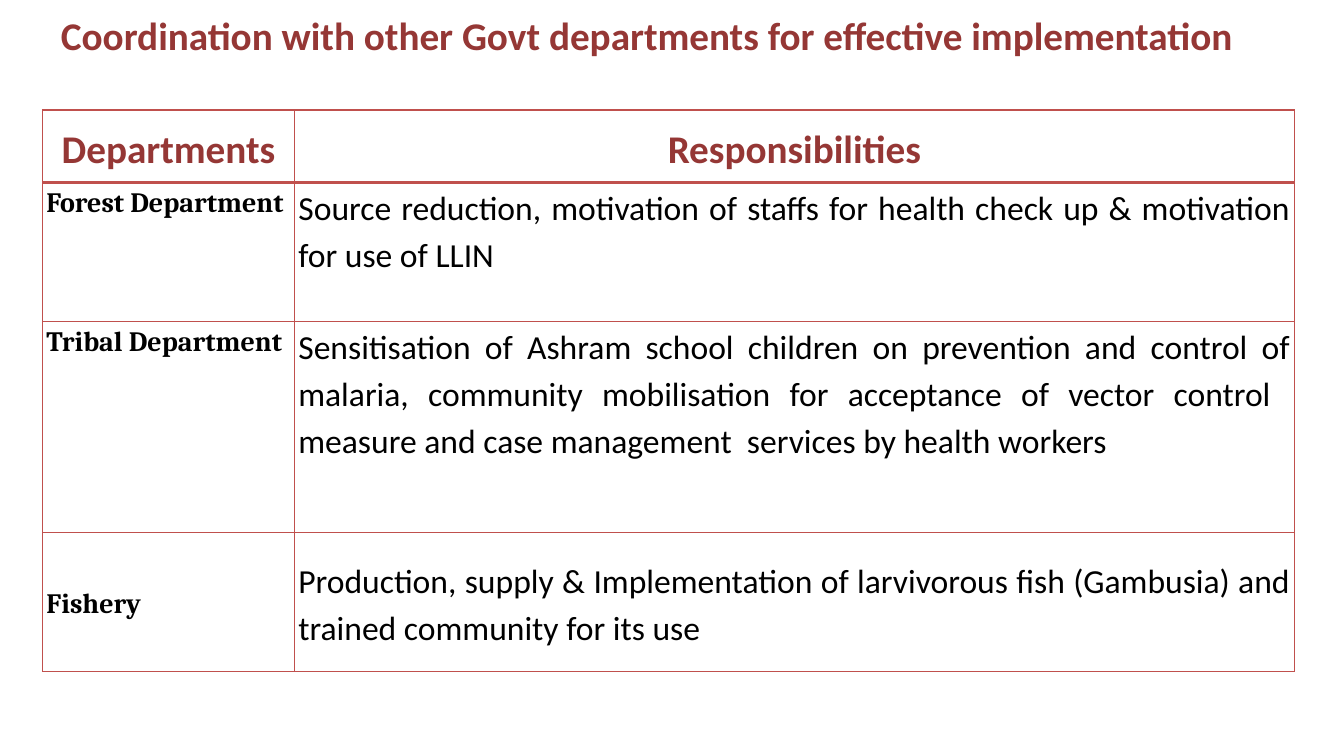
from lxml import etree
from pptx import Presentation
from pptx.dml.color import RGBColor
from pptx.enum.text import MSO_ANCHOR, MSO_AUTO_SIZE, PP_ALIGN
from pptx.oxml.ns import qn
from pptx.util import Cm, Pt

LEFT, CENTER, JUSTIFY = PP_ALIGN.LEFT, PP_ALIGN.CENTER, PP_ALIGN.JUSTIFY
TOP, MIDDLE = MSO_ANCHOR.TOP, MSO_ANCHOR.MIDDLE
NO_AUTOFIT = MSO_AUTO_SIZE.NONE
TITLE_ONLY = 5

COLORS = {"heading": "953735", "text": "000000", "border": "C0504D", "cell": "FFFFFF"}

COLUMN_WIDTHS = [6.35, 25.2]
ROW_HEIGHTS = [1.83, 3.51, 5.31, 3.51]
THIN, THICK = 1, 2.25

HEADERS = ["Departments", "Responsibilities"]
DUTIES = [
    ("Forest Department",
     "Source reduction, motivation of staffs for health check up & motivation for use of LLIN",
     TOP),
    ("Tribal Department",
     "Sensitisation of Ashram school children on prevention and control of malaria, "
     "community mobilisation for acceptance of vector control  measure and case "
     "management  services by health workers",
     TOP),
    ("Fishery",
     "Production, supply & Implementation of larvivorous fish (Gambusia) and trained "
     "community for its use",
     MIDDLE),
]


def write_text(text_frame, text, size=24, font="Calibri", color="text", bold=False,
               align=LEFT, spacing=1.0):
    paragraph = text_frame.paragraphs[0]
    paragraph.alignment = align
    paragraph.line_spacing = spacing
    run = paragraph.add_run()
    run.text = text
    run.font.size = Pt(size)
    run.font.name = font
    run.font.bold = bold
    run.font.color.rgb = RGBColor.from_string(COLORS[color])


def add_border(cell, side, width):
    properties = cell._tc.get_or_add_tcPr()
    line = etree.SubElement(properties, qn(f"a:ln{side}"), w=str(Pt(width)))
    fill = etree.SubElement(line, qn("a:solidFill"))
    etree.SubElement(fill, qn("a:srgbClr"), val=COLORS["border"])


def format_cell(cell, anchor, top, bottom):
    for side, width in (("L", THIN), ("R", THIN), ("T", top), ("B", bottom)):
        add_border(cell, side, width)
    cell.fill.solid()
    cell.fill.fore_color.rgb = RGBColor.from_string(COLORS["cell"])
    cell.vertical_anchor = anchor
    cell.margin_left = cell.margin_right = Cm(0.1)
    cell.margin_top = cell.margin_bottom = 0


def place_title(slide, left, top, width, height):
    title = slide.shapes.title
    title.left, title.top, title.width, title.height = left, top, width, height
    text_frame = title.text_frame
    text_frame.auto_size = NO_AUTOFIT
    text_frame.word_wrap = True
    text_frame.vertical_anchor = TOP
    write_text(text_frame, "Coordination with other Govt departments for effective implementation",
               size=28, color="heading", bold=True, align=CENTER)


def place_duties_table(slide, left, top, width, height):
    table = slide.shapes.add_table(len(ROW_HEIGHTS), len(COLUMN_WIDTHS),
                                   left, top, width, height).table
    for column, column_width in zip(table.columns, COLUMN_WIDTHS):
        column.width = int(width * column_width / sum(COLUMN_WIDTHS))
    for row, row_height in zip(table.rows, ROW_HEIGHTS):
        row.height = int(height * row_height / sum(ROW_HEIGHTS))

    for column_index, header in enumerate(HEADERS):
        cell = table.cell(0, column_index)
        format_cell(cell, MIDDLE, THIN, THICK)
        write_text(cell.text_frame, header, size=28, color="heading", bold=True,
                   align=CENTER, spacing=1.15)

    for row_index, (department, duty, anchor) in enumerate(DUTIES, start=1):
        department_cell, duty_cell = table.rows[row_index].cells
        for cell in (department_cell, duty_cell):
            format_cell(cell, anchor, THICK if row_index == 1 else THIN, THIN)
        write_text(department_cell.text_frame, department, size=20, font="Cambria",
                   bold=True, spacing=1.15)
        write_text(duty_cell.text_frame, duty, align=JUSTIFY, spacing=1.15)


def main():
    presentation = Presentation()
    presentation.slide_width, presentation.slide_height = Cm(33.87), Cm(19.05)
    slide = presentation.slides.add_slide(presentation.slide_layouts[TITLE_ONLY])
    place_title(slide, Cm(1.27), Cm(0.15), Cm(30.05), Cm(2.64))
    place_duties_table(slide, Cm(1.07), Cm(2.77), Cm(sum(COLUMN_WIDTHS)), Cm(sum(ROW_HEIGHTS)))
    presentation.save("out.pptx")


if __name__ == "__main__":
    main()
